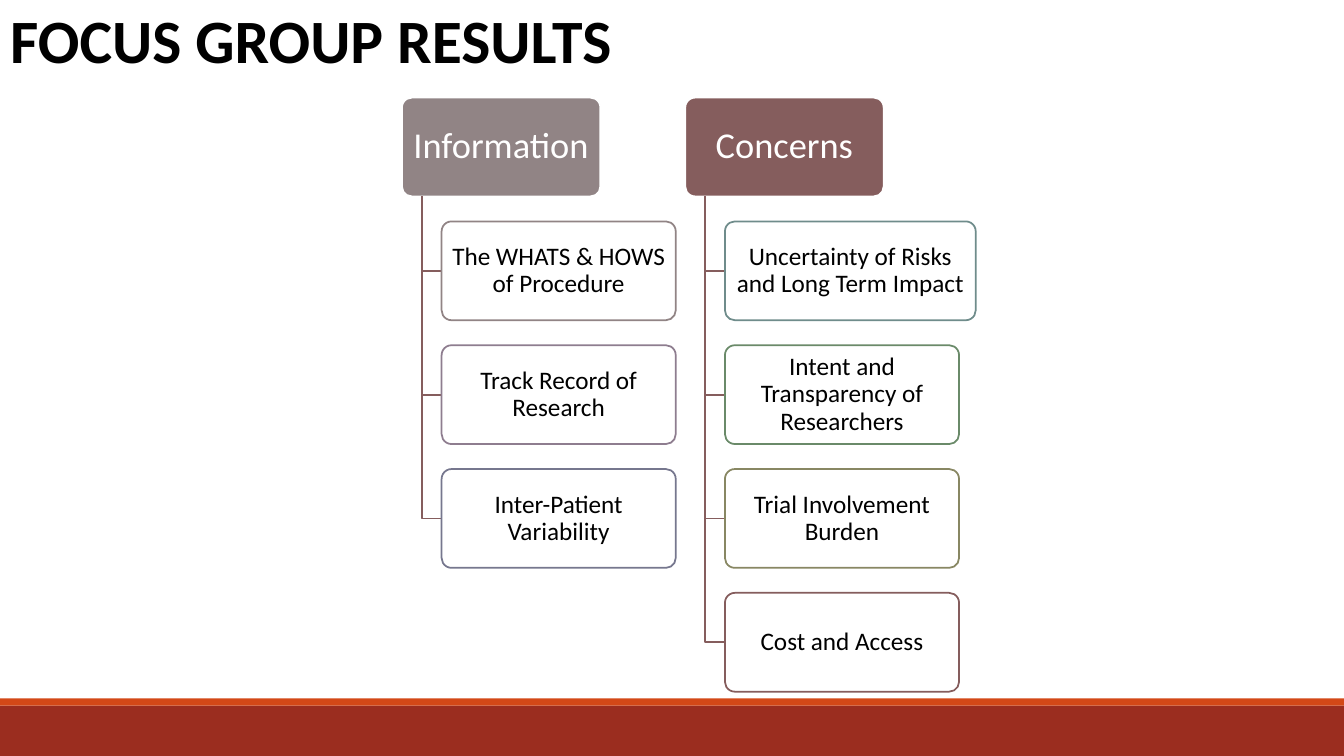
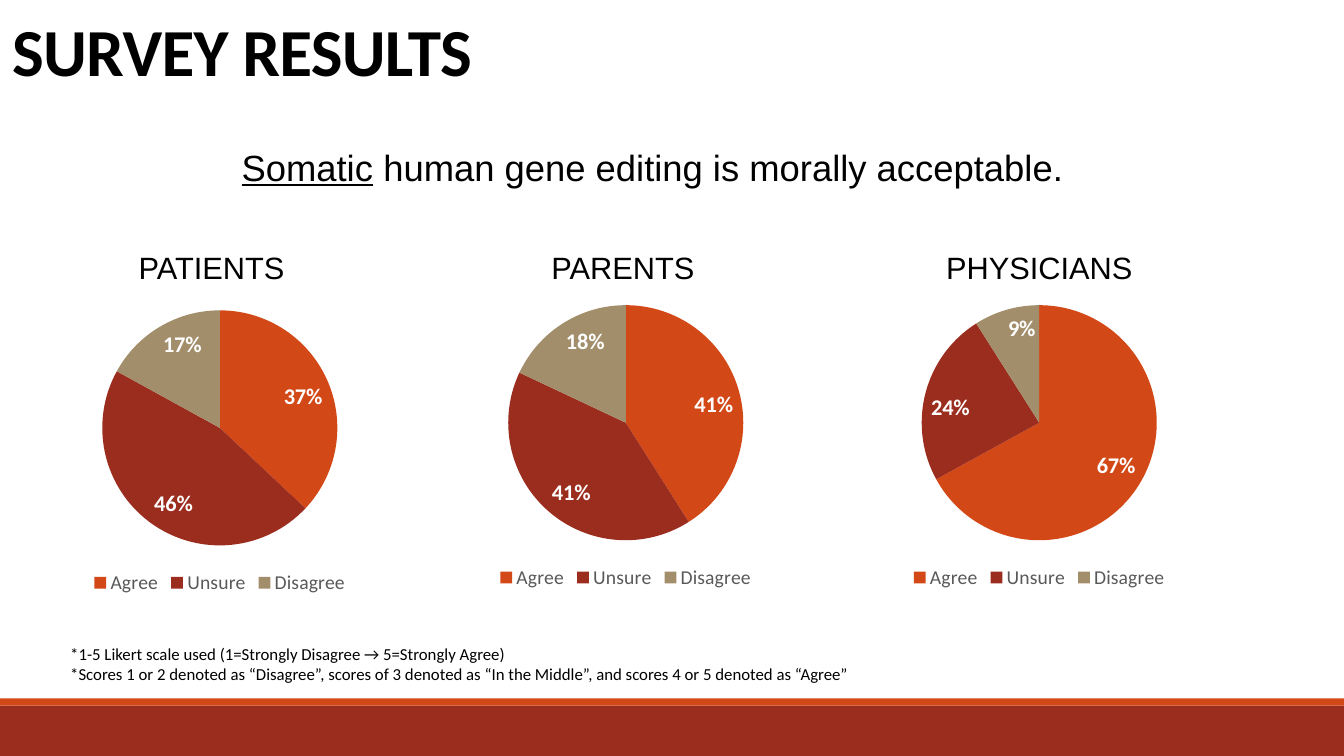
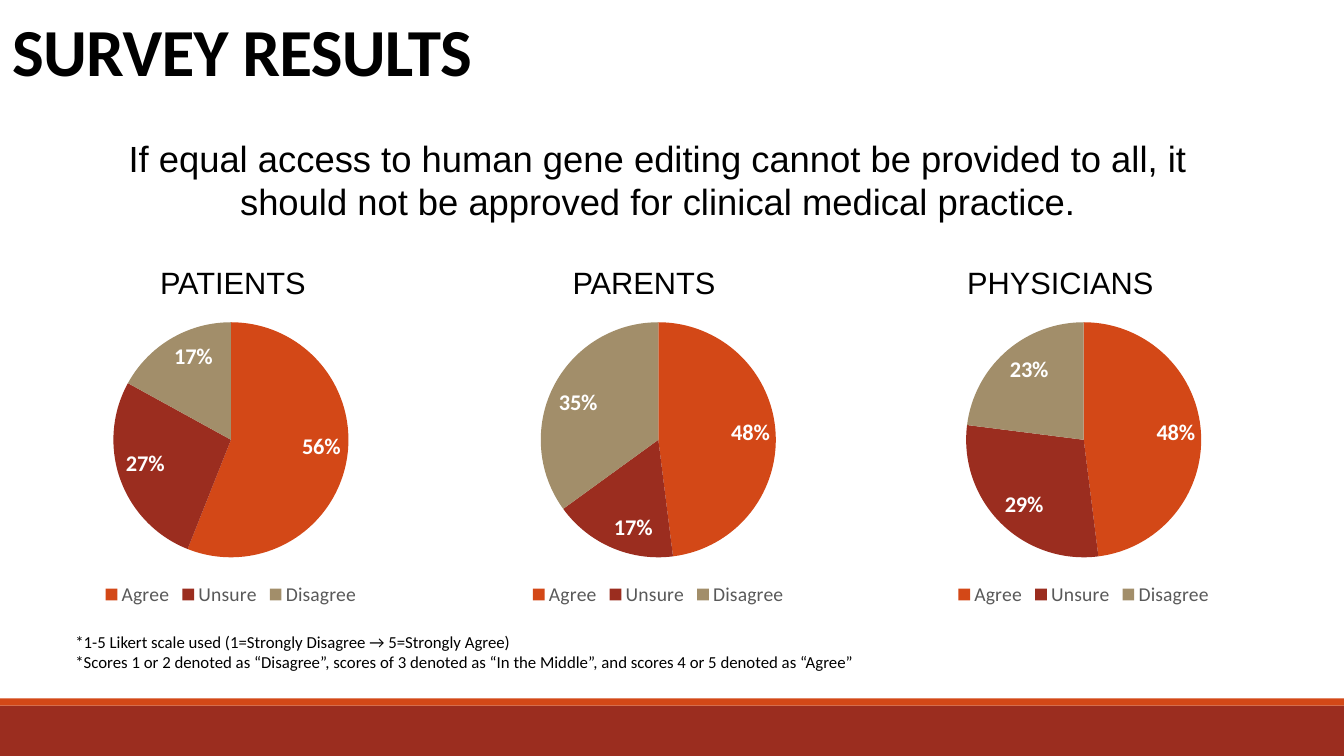
import pptx
import pptx.chart.data
import pptx.dml.color
import pptx.enum.chart
import pptx.enum.shapes
import pptx.enum.text
import pptx.oxml.ns
import pptx.util

Cm, Pt = pptx.util.Cm, pptx.util.Pt
SHAPE = pptx.enum.shapes.MSO_SHAPE
ALIGN = pptx.enum.text.PP_ALIGN
ANCHOR = pptx.enum.text.MSO_ANCHOR

BLACK, WHITE, GRAY = "000000", "FFFFFF", "595959"
ORANGE, RED, TAN = "D34817", "9B2D1F", "A28E6A"
SPINE = "855D5D"
SLIDE_W, SLIDE_H = 33.87, 19.05

BANDS = [(17.78, 1.27, RED), (17.6, 0.18, ORANGE)]

THEMES = [
    ("Information", "918485", [
        ("The WHATS & HOWS of Procedure", "918485", 5.9),
        ("Track Record of Research", "8E7D8F", 5.9),
        ("Inter-Patient Variability", "76778E", 5.9),
    ]),
    ("Concerns", "855D5D", [
        ("Uncertainty of Risks and Long Term Impact", "6F8C8B", 6.32),
        ("Intent and Transparency of Researchers", "6A8A69", 5.9),
        ("Trial Involvement Burden", "888763", 5.9),
        ("Cost and Access", "855D5D", 5.9),
    ]),
]

ANSWERS = [("Agree", ORANGE), ("Unsure", RED), ("Disagree", TAN)]
FOOTNOTES = [
    "*1-5 Likert scale used (1=Strongly Disagree → 5=Strongly Agree)",
    "*Scores 1 or 2 denoted as “Disagree”, scores of 3 denoted as “In the Middle”, "
    "and scores 4 or 5 denoted as “Agree”",
]

SURVEYS = [
    {
        "statement": [("Somatic", True), (" human gene editing is morally acceptable.", False)],
        "statement_box": (5.84, 3.53, 22.7, 1.37),
        "statement_align": ALIGN.LEFT,
        "heading_top": 6.15,
        "note_at": (1.52, 16.1),
        "groups": [
            ("PATIENTS", 1.52, (-0.81, 7.47), (37, 46, 17)),
            ("PARENTS", 11.89, (9.42, 7.34), (41, 41, 18)),
            ("PHYSICIANS", 22.38, (19.84, 7.34), (67, 24, 9)),
        ],
    },
    {
        "statement": [("If equal access to human gene editing cannot be provided to all, "
                       "it should not be approved for clinical medical practice.", False)],
        "statement_box": (2.46, 3.3, 28.27, 2.49),
        "statement_align": ALIGN.CENTER,
        "heading_top": 6.53,
        "note_at": (1.65, 15.8),
        "groups": [
            ("PATIENTS", 2.06, (-0.53, 7.77), (56, 27, 17)),
            ("PARENTS", 12.42, (10.24, 7.77), (48, 17, 35)),
            ("PHYSICIANS", 22.91, (20.96, 7.77), (48, 29, 23)),
        ],
    },
]


def rgb(color):
    return pptx.dml.color.RGBColor.from_string(color)


def style(font, size, color=BLACK, name="Calibri", bold=False):
    font.name, font.size, font.bold = name, Pt(size), bold
    font.color.rgb = rgb(color)


def add_run(p, text, size, color=BLACK, name="Calibri", bold=False):
    r = p.add_run()
    r.text = text
    style(r.font, size, color, name, bold)
    return r


def add_box(slide, kind, box, fill, line=None):
    sp = slide.shapes.add_shape(kind, *map(Cm, box))
    sp.shadow.inherit = False
    sp.fill.solid()
    sp.fill.fore_color.rgb = rgb(fill)
    if line:
        sp.line.color.rgb = rgb(line)
        sp.line.width = Pt(1.25)
    else:
        sp.line.fill.background()
    return sp


def add_card(slide, box, text, size, color, fill, line, inset):
    sp = add_box(slide, SHAPE.ROUNDED_RECTANGLE, box, fill, line)
    sp.adjustments[0] = 0.1
    tf = sp.text_frame
    tf.word_wrap = True
    tf.vertical_anchor = ANCHOR.MIDDLE
    tf.margin_left = tf.margin_right = Cm(inset)
    tf.margin_top = tf.margin_bottom = Cm(0.15)
    p = tf.paragraphs[0]
    p.alignment = ALIGN.CENTER
    p.line_spacing = 0.9
    add_run(p, text, size, color)


def add_elbow(slide, x, top, bottom, reach):
    ff = slide.shapes.build_freeform(Cm(x), Cm(top))
    ff.add_line_segments([(Cm(x), Cm(bottom)), (Cm(x + reach), Cm(bottom))], close=False)
    sp = ff.convert_to_shape()
    sp.shadow.inherit = False
    sp.fill.background()
    sp.line.color.rgb = rgb(SPINE)
    sp.line.width = Pt(1.25)


def add_text(slide, box, paragraphs, size, name, align=ALIGN.LEFT):
    tf = slide.shapes.add_textbox(*map(Cm, box)).text_frame
    tf.word_wrap = True
    for i, runs in enumerate(paragraphs):
        p = tf.paragraphs[0] if i == 0 else tf.add_paragraph()
        p.alignment = align
        for text, underlined in runs:
            add_run(p, text, size, name=name).font.underline = underlined


def add_pie(slide, left, top, values):
    data = pptx.chart.data.CategoryChartData()
    data.categories = [answer for answer, _ in ANSWERS]
    data.add_series("Series 1", values)
    chart = slide.shapes.add_chart(
        pptx.enum.chart.XL_CHART_TYPE.PIE, Cm(left), Cm(top), Cm(12.7), Cm(7.62), data).chart
    style(chart.font, 10)
    chart.has_title = False
    chart.has_legend = True
    chart.legend.position = pptx.enum.chart.XL_LEGEND_POSITION.BOTTOM
    chart.legend.include_in_layout = False
    style(chart.legend.font, 14, GRAY)
    plot = chart.plots[0]
    plot.vary_by_categories = True
    for i, (_, color) in enumerate(ANSWERS):
        fill = plot.series[0].points[i].format.fill
        fill.solid()
        fill.fore_color.rgb = rgb(color)
    plot.has_data_labels = True
    labels = plot.data_labels
    labels.show_percentage, labels.show_value = True, False
    labels.number_format, labels.number_format_is_linked = "0%", False
    labels.position = pptx.enum.chart.XL_LABEL_POSITION.INSIDE_END
    style(labels.font, 16, WHITE, bold=True)


def add_slide(prs, title, box, size, line_spacing, tracking=0):
    slide = prs.slides.add_slide(prs.slide_layouts[5])
    sp = slide.shapes.title
    sp.left, sp.top, sp.width, sp.height = map(Cm, box)
    tf = sp.text_frame
    tf.auto_size = pptx.enum.text.MSO_AUTO_SIZE.NONE
    tf.vertical_anchor = ANCHOR.TOP
    p = tf.paragraphs[0]
    p.alignment = ALIGN.LEFT
    p.line_spacing = line_spacing
    add_run(p, title, size, bold=True)
    for rPr in sp.element.iter(pptx.oxml.ns.qn("a:rPr")):
        rPr.set("spc", str(tracking))
    return slide


def add_master_bands(prs, slide):
    for top, height, color in BANDS:
        sp = add_box(slide, SHAPE.RECTANGLE, (0, top, SLIDE_W, height), color)
        prs.slide_master.element.cSld.spTree.append(sp.element)


def fill_focus_groups(slide):
    top, height, step, indent = 2.46, 2.49, 3.12, 0.5
    for col, (theme, fill, cards) in enumerate(THEMES):
        left = 10.13 + 7.14 * col
        add_card(slide, (left, top, 5, height), theme, 26, WHITE, fill, WHITE, 0.2)
        for row, (text, line, width) in enumerate(cards, 1):
            y = top + step * row
            add_elbow(slide, left + indent, top + height, y + height / 2, indent)
            add_card(slide, (left + 2 * indent, y, width, height), text, 18, BLACK, WHITE, line, 0.18)


def fill_survey(slide, survey):
    add_text(slide, survey["statement_box"], [survey["statement"]], 26, "Arial",
             survey["statement_align"])
    for group, left, chart_at, values in survey["groups"]:
        add_text(slide, (left, survey["heading_top"], 7.62, 1.2), [[(group, False)]], 22, "Arial",
                 ALIGN.CENTER)
        add_pie(slide, *chart_at, values)
    add_text(slide, (*survey["note_at"], 30.45, 1.27), [[(note, False)] for note in FOOTNOTES],
             12, "Calibri")


def main():
    prs = pptx.Presentation()
    prs.slide_width, prs.slide_height = Cm(SLIDE_W), Cm(SLIDE_H)
    slide = add_slide(prs, "FOCUS GROUP RESULTS", (0, 0.13, 29.21, 3.68), 44, 0.9)
    add_master_bands(prs, slide)
    fill_focus_groups(slide)
    for survey in SURVEYS:
        slide = add_slide(prs, "SURVEY RESULTS", (0.05, 0.43, 32.84, 4.04), 48, 0.85, -50)
        fill_survey(slide, survey)
    prs.save("out.pptx")


if __name__ == "__main__":
    main()
